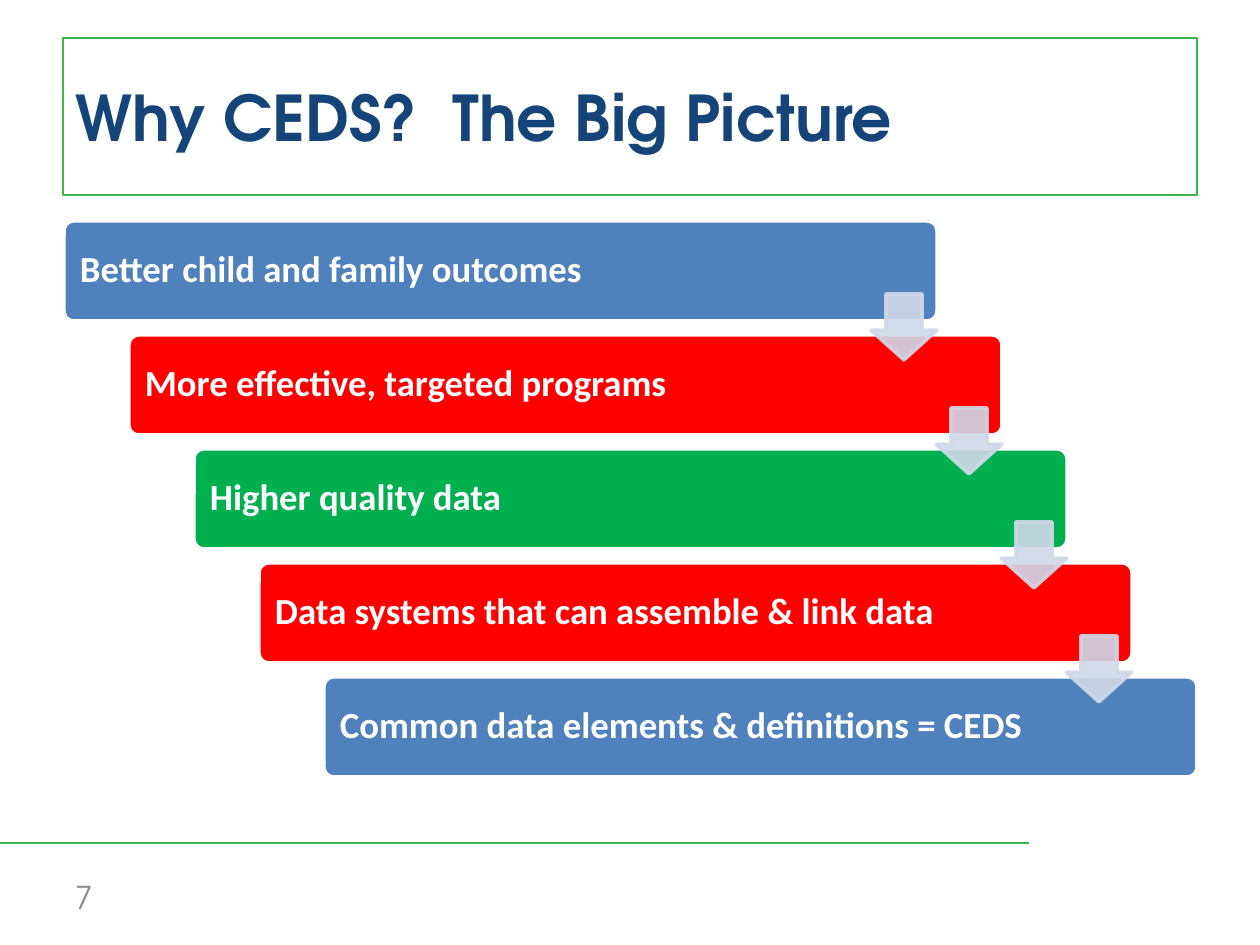
from lxml import etree
from pptx import Presentation
from pptx.dml.color import RGBColor
from pptx.enum.shapes import MSO_CONNECTOR, MSO_SHAPE
from pptx.enum.text import MSO_ANCHOR, PP_ALIGN
from pptx.oxml.ns import qn
from pptx.util import Pt

RECTANGLE = MSO_SHAPE.RECTANGLE
ROUNDED = MSO_SHAPE.ROUNDED_RECTANGLE
DOWN_ARROW = MSO_SHAPE.DOWN_ARROW
STRAIGHT = MSO_CONNECTOR.STRAIGHT
MIDDLE = MSO_ANCHOR.MIDDLE
LEFT = PP_ALIGN.LEFT

EMU_PER_PX = 914400 / 126
HEADING_FONT = "TeX Gyre Adventor"
BODY_FONT = "Calibri"
GREEN = "39B54A"
BLUE = "4F81BD"
RED = "FF0000"
WHITE = "FFFFFF"
PALE_BLUE = "D0D8E8"

STEP_X, STEP_Y = 65, 114
STEPS = [
    ("Better child and family outcomes", BLUE),
    ("More effective, targeted programs", RED),
    ("Higher quality data", "00B050"),
    ("Data systems that can assemble & link data", RED),
    ("Common data elements & definitions = CEDS", BLUE),
]


def px(length):
    return round(length * EMU_PER_PX)


def color(hex_value):
    return RGBColor.from_string(hex_value)


def write_text(shape, text, *, size, font, hex_value, bold=False, inset=13, spacing=None):
    frame = shape.text_frame
    frame.word_wrap = True
    frame.vertical_anchor = MIDDLE
    frame.margin_left = frame.margin_right = px(inset)
    paragraph = frame.paragraphs[0]
    paragraph.alignment = LEFT
    paragraph.line_spacing = spacing
    run = paragraph.add_run()
    run.text = text
    run.font.size = Pt(size)
    run.font.name = font
    run.font.bold = bold
    run.font.color.rgb = color(hex_value)


def add_block(slide, preset, left, top, width, height, *, fill, line, line_width, adjustments=()):
    block = slide.shapes.add_shape(preset, px(left), px(top), px(width), px(height))
    block.shadow.inherit = False
    for index, value in enumerate(adjustments):
        block.adjustments[index] = value
    if fill:
        block.fill.solid()
        block.fill.fore_color.rgb = color(fill)
    else:
        block.fill.background()
    block.line.color.rgb = color(line)
    block.line.width = Pt(line_width)
    return block


def set_opacity(shape, percent):
    for rgb in shape.element.spPr.iter(qn("a:srgbClr")):
        etree.SubElement(rgb, qn("a:alpha"), val=str(percent * 1000))


def add_footer(slide):
    rule = slide.shapes.add_connector(STRAIGHT, 0, px(843), px(1029), px(843))
    rule.line.color.rgb = color(GREEN)
    rule.line.width = Pt(1.5)
    etree.SubElement(rule.element.spPr, qn("a:effectLst"))
    page_number = slide.shapes.add_textbox(px(63), px(872), px(294), px(50))
    write_text(page_number, "7", size=18, font=HEADING_FONT, hex_value="8C8C8C")


def add_title(slide):
    title = add_block(slide, RECTANGLE, 63, 38, 1134, 157, fill=None, line=GREEN, line_width=1)
    write_text(title, "Why CEDS?  The Big Picture", size=36, font=HEADING_FONT,
               hex_value="154578", bold=True)


def add_step(slide, index, label, fill):
    bar = add_block(slide, ROUNDED, 64 + index * STEP_X, 221 + index * STEP_Y, 873, 100,
                    fill=fill, line=WHITE, line_width=2, adjustments=[0.1])
    write_text(bar, label, size=21, font=BODY_FONT, hex_value=WHITE, bold=True, spacing=0.9)


def add_step_arrow(slide, index):
    arrow = add_block(slide, DOWN_ARROW, 871 + index * STEP_X, 294 + index * STEP_Y, 66, 66,
                      fill=PALE_BLUE, line=PALE_BLUE, line_width=2, adjustments=[0.55, 0.45])
    set_opacity(arrow, 90)


def main():
    presentation = Presentation()
    presentation.slide_width = px(1260)
    presentation.slide_height = px(945)
    slide = presentation.slides.add_slide(presentation.slide_layouts[6])
    add_footer(slide)
    for index, (label, fill) in enumerate(STEPS):
        add_step(slide, index, label, fill)
    for index in range(len(STEPS) - 1):
        add_step_arrow(slide, index)
    add_title(slide)
    presentation.save("out.pptx")


if __name__ == "__main__":
    main()
